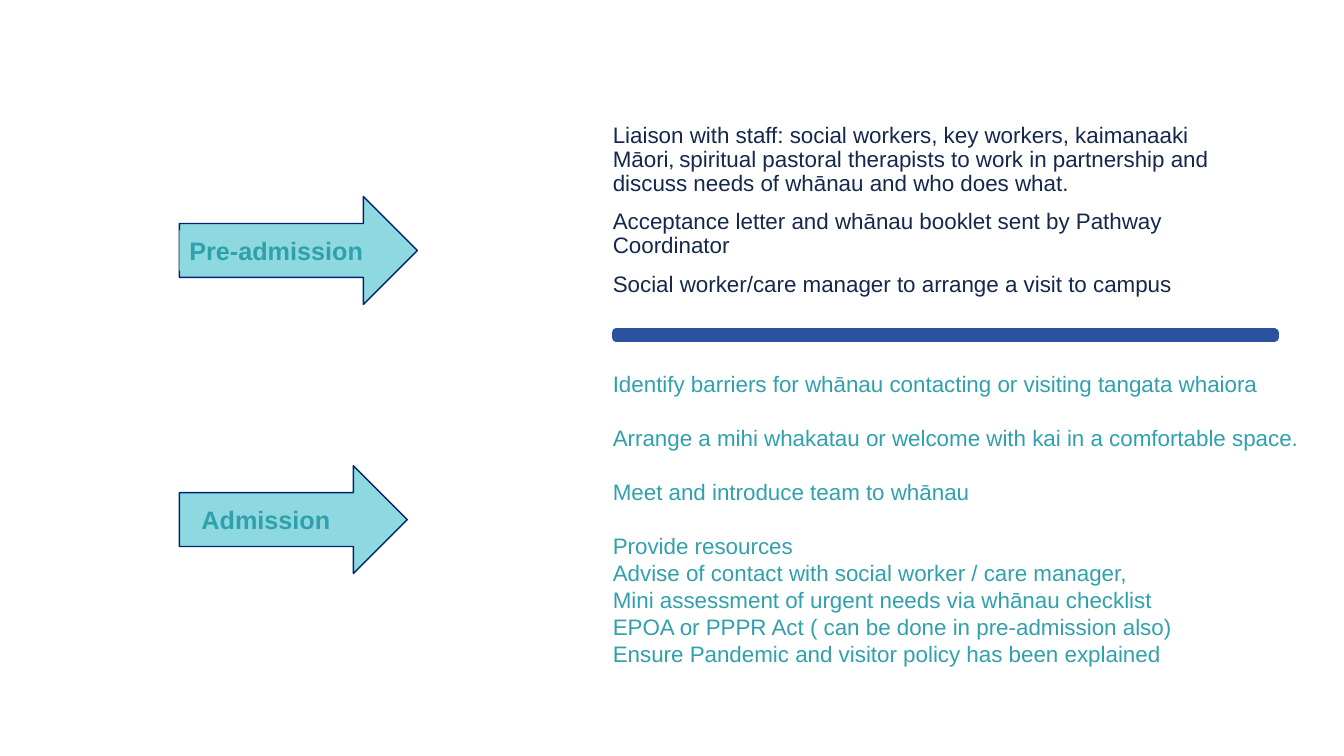
from dataclasses import dataclass
from pptx import Presentation
from pptx.dml.color import RGBColor
from pptx.enum.shapes import MSO_SHAPE as Shape
from pptx.enum.text import MSO_ANCHOR as Anchor, PP_ALIGN as Align
from pptx.util import Inches, Pt

STAGES = [
    {"name": "Pre-admission", "arrow": (1.78, 1.95, 2.36), "label": (1.78, 2.06)},
    {"name": "Admission", "arrow": (1.78, 4.62, 2.26), "label": (1.9, 1.59)},
]
PRE_ADMISSION = [
    [
        ("Liaison with staff: social workers, key workers, kaimanaaki Māori", "Arial"),
        (", ", "Calibri"),
        ("spiritual pastoral therapists to work in partnership and "
         "discuss needs of whānau and who does what.", "Arial"),
    ],
    [("Acceptance letter and whānau booklet sent by Pathway Coordinator", "Arial")],
    [("Social worker/care manager to arrange a visit to campus", "Arial")],
]
ADMISSION_GROUPS = [
    ["Identify barriers for whānau contacting or visiting tangata whaiora"],
    ["Arrange a mihi whakatau or welcome with kai in a comfortable space."],
    ["Meet and introduce team to whānau"],
    [
        "Provide resources",
        "Advise of contact with social worker / care manager,",
        "Mini assessment of urgent needs via whānau checklist",
        "EPOA or PPPR Act ( can be done in pre-admission also)",
        "Ensure Pandemic and visitor policy has been explained",
    ],
]


@dataclass(frozen=True)
class Theme:
    navy: RGBColor = RGBColor.from_string("15284C")
    teal: RGBColor = RGBColor.from_string("30A1AC")
    aqua: RGBColor = RGBColor.from_string("8ED8DF")
    outline: RGBColor = RGBColor.from_string("002671")
    divider: RGBColor = RGBColor.from_string("2B539D")
    font: str = "Arial"
    body_size: int = 16
    label_size: int = 18
    line_height: float = 19.3


THEME = Theme()
ARROW_HEIGHT = 1.07
LABEL_HEIGHT = 0.4


def add_run(para, text, size, color, font=THEME.font, bold=False):
    span = para.add_run()
    span.text = text
    span.font.name = font
    span.font.size = Pt(size)
    span.font.color.rgb = color
    span.font.bold = bold


def add_block(page, kind, place, fill, line=None, width=1):
    block = page.shapes.add_shape(kind, *map(Inches, place))
    block.shadow.inherit = False
    block.fill.solid()
    block.fill.fore_color.rgb = fill
    if line is None:
        block.line.fill.background()
    else:
        block.line.color.rgb = line
        block.line.width = Pt(width)
    return block


def add_stage(page, stage):
    left, top, width = stage["arrow"]
    add_block(page, Shape.RIGHT_ARROW, (left, top, width, ARROW_HEIGHT), THEME.aqua, THEME.outline)
    label_left, label_width = stage["label"]
    label_top = top + (ARROW_HEIGHT - LABEL_HEIGHT) / 2
    label = add_block(page, Shape.RECTANGLE, (label_left, label_top, label_width, LABEL_HEIGHT), THEME.aqua)
    frame = label.text_frame
    frame.word_wrap = False
    frame.vertical_anchor = Anchor.TOP
    para = frame.paragraphs[0]
    para.alignment = Align.LEFT
    add_run(para, stage["name"], THEME.label_size, THEME.teal, bold=True)


def add_notes_box(page, place, rows, color, spacing):
    frame = page.shapes.add_textbox(*map(Inches, place)).text_frame
    frame.word_wrap = True
    for index, (spans, gap) in enumerate(rows):
        para = frame.add_paragraph() if index else frame.paragraphs[0]
        para.line_spacing = spacing
        para.space_before = Pt(gap if index else 0)
        for text, font in spans:
            add_run(para, text, THEME.body_size, color, font)


def main():
    deck = Presentation()
    deck.slide_width, deck.slide_height = Inches(13.33), Inches(7.5)
    page = deck.slides.add_slide(deck.slide_layouts[6])
    for stage in STAGES:
        add_stage(page, stage)
    before_rows = [(spans, 10) for spans in PRE_ADMISSION]
    add_notes_box(page, (5.98, 1.18, 6.57, 1.84), before_rows, THEME.navy, 0.9)
    during_rows = [
        ([(text, THEME.font)], 0 if index else THEME.line_height)
        for group in ADMISSION_GROUPS
        for index, text in enumerate(group)
    ]
    add_notes_box(page, (5.98, 3.62, 7.17, 3.06), during_rows, THEME.teal, Pt(THEME.line_height))
    add_block(page, Shape.RECTANGLE, (6.11, 3.3, 6.53, 0.05), THEME.divider, THEME.divider, 6)
    deck.save("out.pptx")


if __name__ == "__main__":
    main()
